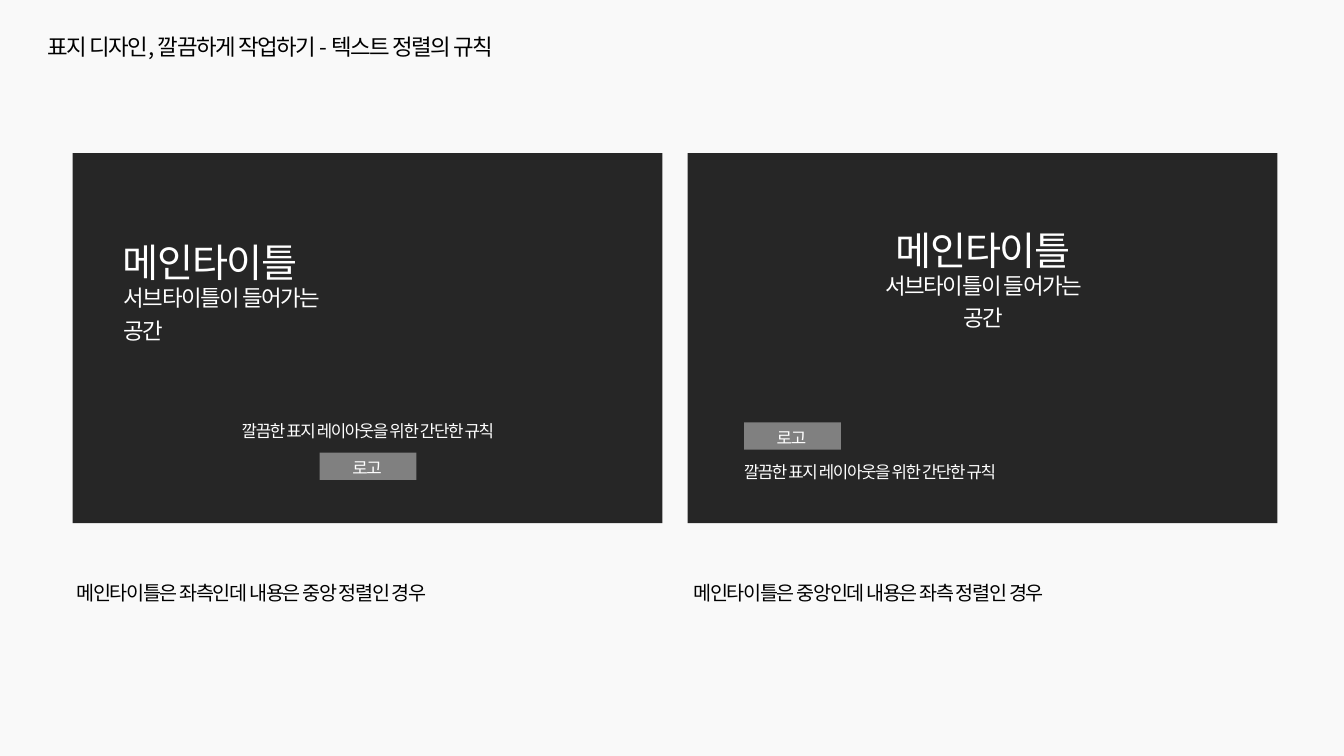
"""Build a slide comparing two covers with mismatched text alignment."""
from dataclasses import dataclass

from lxml.etree import SubElement
from pptx import Presentation
from pptx.dml.color import RGBColor
from pptx.enum.shapes import MSO_SHAPE
from pptx.enum.text import MSO_AUTO_SIZE, PP_ALIGN
from pptx.oxml.ns import qn
from pptx.shapes.shapetree import GroupShapes, SlideShapes
from pptx.util import Inches, Pt

FONT = "Noto Sans CJK KR"
COLORS = {
    "background": "F9F9F9",
    "cover": "262626",
    "logo": "808080",
    "dark_text": "000000",
    "light_text": "FFFFFF",
}
LEFT, CENTER = PP_ALIGN.LEFT, PP_ALIGN.CENTER
Shapes = SlideShapes | GroupShapes


@dataclass(frozen=True)
class Box:
    left: float
    top: float
    width: float
    height: float


@dataclass(frozen=True)
class Label:
    text: str
    box: Box
    size: int
    align: PP_ALIGN = LEFT
    spacing: float = 1.2
    color: str = "light_text"


@dataclass(frozen=True)
class Cover:
    left: float
    title: Box
    subtitle: Box
    title_align: PP_ALIGN
    rule: Box
    rule_align: PP_ALIGN
    logo_left: float
    logo_top: float
    caption: str
    caption_left: float


HEADING = Label("표지 디자인, 깔끔하게 작업하기 - 텍스트 정렬의 규칙",
                Box(0.37, 0.28, 6.42, 0.37), 16, spacing=1.0, color="dark_text")
COVERS = [
    Cover(0.72, Box(1.12, 2.22, 2.52, 0.58), Box(1.13, 2.72, 2.52, 0.37), LEFT,
          Box(2.08, 4.08, 3.14, 0.32), CENTER, 3.17, 4.49,
          "메인타이틀은 좌측인데 내용은 중앙 정렬인 경우", 0.66),
    Cover(6.82, Box(8.49, 2.1, 2.52, 0.62), Box(8.49, 2.6, 2.52, 0.4), CENTER,
          Box(7.28, 4.49, 3.14, 0.32), LEFT, 7.38, 4.19,
          "메인타이틀은 중앙인데 내용은 좌측 정렬인 경우", 6.78),
]


def rgb(name: str) -> RGBColor:
    return RGBColor.from_string(COLORS[name])


def place(box: Box) -> list[int]:
    return [Inches(v) for v in (box.left, box.top, box.width, box.height)]


def add_label(shapes: Shapes, label: Label) -> None:
    tf = shapes.add_textbox(*place(label.box)).text_frame
    tf.word_wrap = True
    tf.auto_size = MSO_AUTO_SIZE.SHAPE_TO_FIT_TEXT
    p = tf.paragraphs[0]
    p.text = label.text
    p.alignment = label.align
    p.line_spacing = label.spacing
    p.font.size = Pt(label.size)
    p.font.name = FONT
    p.font.color.rgb = rgb(label.color)
    props = p._p.get_or_add_pPr().get_or_add_defRPr()
    props.set("spc", "-100")
    SubElement(props, qn("a:ea"), typeface=FONT)


def add_block(shapes: Shapes, box: Box, color: str) -> None:
    sp = shapes.add_shape(MSO_SHAPE.RECTANGLE, *place(box))
    sp.shadow.inherit = False
    sp.fill.solid()
    sp.fill.fore_color.rgb = rgb(color)
    sp.line.fill.background()


def add_cover(shapes: SlideShapes, cover: Cover) -> None:
    add_label(shapes, Label(cover.caption, Box(cover.caption_left, 5.64, 4.14, 0.41),
                            14, spacing=1.3, color="dark_text"))
    group = shapes.add_group_shape().shapes
    add_block(group, Box(cover.left, 1.52, 5.85, 3.67), "cover")
    add_label(group, Label("메인타이틀", cover.title, 28, cover.title_align))
    add_label(group, Label("서브타이틀이 들어가는 공간", cover.subtitle, 16, cover.title_align))
    add_label(group, Label("깔끔한 표지 레이아웃을 위한 간단한 규칙", cover.rule, 12, cover.rule_align))
    add_block(group, Box(cover.logo_left, cover.logo_top, 0.96, 0.27), "logo")
    logo_text = Box(cover.logo_left + 0.18, cover.logo_top - 0.04, 0.58, 0.32)
    add_label(group, Label("로고", logo_text, 12, CENTER))


def main() -> None:
    prs = Presentation()
    prs.slide_width, prs.slide_height = Inches(13.33), Inches(7.5)
    s = prs.slides.add_slide(prs.slide_layouts[6])
    s.background.fill.solid()
    s.background.fill.fore_color.rgb = rgb("background")
    add_label(s.shapes, HEADING)
    for cover in COVERS:
        add_cover(s.shapes, cover)
    prs.save("out.pptx")


if __name__ == "__main__":
    main()
